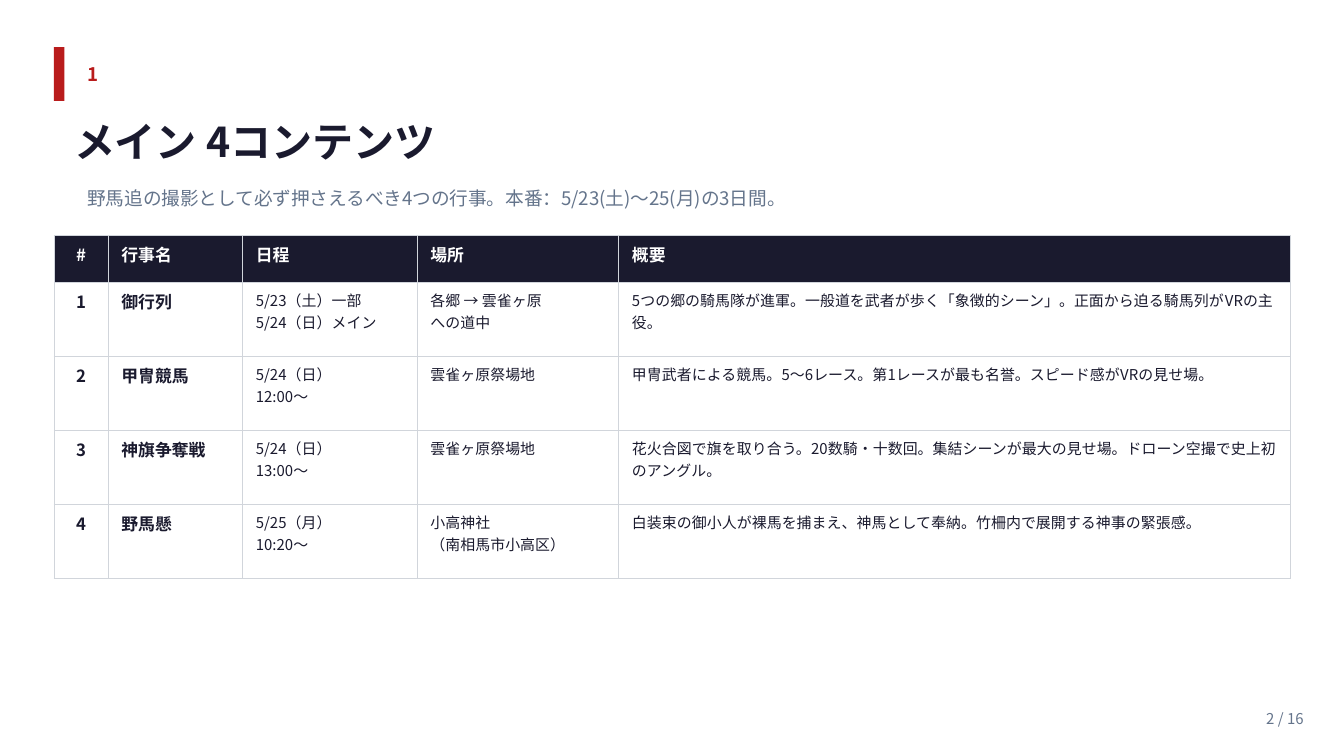
from lxml import etree
from pptx import Presentation
from pptx.dml.color import RGBColor
from pptx.enum.shapes import MSO_SHAPE
from pptx.enum.text import MSO_ANCHOR, PP_ALIGN
from pptx.oxml.ns import qn
from pptx.util import Cm, Pt

RECT = MSO_SHAPE.RECTANGLE
MIDDLE = MSO_ANCHOR.MIDDLE
LEFT, CENTER, RIGHT = PP_ALIGN.LEFT, PP_ALIGN.CENTER, PP_ALIGN.RIGHT

FONT = "Noto Sans CJK JP"
RED, NAVY, SLATE, GRID, WHITE = "B91C1C", "1A1A2E", "64748B", "D1D5DB", "FFFFFF"

COLUMN_WIDTHS = [1.02, 2.54, 3.3, 3.81, 12.7]
HEADER_HEIGHT, ROW_HEIGHT = 0.89, 1.4
EVENTS = [
    ["#", "行事名", "日程", "場所", "概要"],
    ["1", "御行列", "5/23（土）一部\n5/24（日）メイン", "各郷 → 雲雀ヶ原\nへの道中",
     "5つの郷の騎馬隊が進軍。一般道を武者が歩く「象徴的シーン」。正面から迫る騎馬列がVRの主役。"],
    ["2", "甲冑競馬", "5/24（日）\n12:00〜", "雲雀ヶ原祭場地",
     "甲冑武者による競馬。5〜6レース。第1レースが最も名誉。スピード感がVRの見せ場。"],
    ["3", "神旗争奪戦", "5/24（日）\n13:00〜", "雲雀ヶ原祭場地",
     "花火合図で旗を取り合う。20数騎・十数回。集結シーンが最大の見せ場。ドローン空撮で史上初のアングル。"],
    ["4", "野馬懸", "5/25（月）\n10:20〜", "小高神社\n（南相馬市小高区）",
     "白装束の御小人が裸馬を捕まえ、神馬として奉納。竹柵内で展開する神事の緊張感。"],
]


def rgb(color):
    return RGBColor.from_string(color)


def write(tf, text, size, color, bold=False, align=LEFT):
    tf.text = text
    for p in tf.paragraphs:
        p.alignment = align
        for r in p.runs:
            r.font.name = FONT
            r.font.size = Pt(size)
            r.font.bold = bold
            r.font.color.rgb = rgb(color)
            # East Asian text takes its typeface from its own element
            etree.SubElement(r.font._element, qn("a:ea"), typeface=FONT)


def add_label(s, x, y, w, h, text, size, color, bold=False, align=LEFT):
    tf = s.shapes.add_textbox(Cm(x), Cm(y), Cm(w), Cm(h)).text_frame
    tf.word_wrap = True
    tf.vertical_anchor = MIDDLE
    write(tf, text, size, color, bold, align)
    return tf


def add_bar(s, x, y, w, h, color):
    sp = s.shapes.add_shape(RECT, Cm(x), Cm(y), Cm(w), Cm(h))
    sp.shadow.inherit = False
    sp.fill.solid()
    sp.fill.fore_color.rgb = rgb(color)
    sp.line.fill.background()


def set_borders(cell, color, width):
    tc_pr = cell._tc.get_or_add_tcPr()
    for side in ("a:lnL", "a:lnR", "a:lnT", "a:lnB"):
        ln = etree.SubElement(tc_pr, qn(side), w=str(Pt(width)))
        fill = etree.SubElement(ln, qn("a:solidFill"))
        etree.SubElement(fill, qn("a:srgbClr"), val=color)


def add_event_table(s, x, y):
    height = HEADER_HEIGHT + ROW_HEIGHT * (len(EVENTS) - 1)
    table = s.shapes.add_table(len(EVENTS), len(COLUMN_WIDTHS), Cm(x), Cm(y),
                               Cm(sum(COLUMN_WIDTHS)), Cm(height)).table
    for column, width in zip(table.columns, COLUMN_WIDTHS):
        column.width = Cm(width)
    for i, event in enumerate(EVENTS):
        header = i == 0
        table.rows[i].height = Cm(HEADER_HEIGHT if header else ROW_HEIGHT)
        for j, text in enumerate(event):
            cell = table.cell(i, j)
            set_borders(cell, GRID, 0.5)
            if header:
                cell.fill.solid()
                cell.fill.fore_color.rgb = rgb(NAVY)
            else:
                cell.fill.background()
            strong = header or j < 2
            write(cell.text_frame, text, 9 if strong else 8,
                  WHITE if header else NAVY, strong, CENTER if j == 0 else LEFT)


def main():
    prs = Presentation()
    prs.slide_width, prs.slide_height = Cm(25.4), Cm(14.29)
    s = prs.slides.add_slide(prs.slide_layouts[6])

    # Section marker
    add_bar(s, 1.02, 0.89, 0.2, 1.02, RED)
    add_label(s, 1.4, 0.89, 5.08, 1.02, "1", 10, RED, bold=True)

    # Title and lead
    title = add_label(s, 1.4, 2.03, 22.86, 1.27, "メイン 4コンテンツ", 22, NAVY, bold=True)
    title.margin_left = title.margin_right = title.margin_top = title.margin_bottom = 0
    add_label(s, 1.4, 3.3, 22.86, 0.89,
              "野馬追の撮影として必ず押さえるべき4つの行事。本番：5/23(土)〜25(月)の3日間。", 10, SLATE)

    # Events
    add_event_table(s, 1.02, 4.45)

    # Page number
    add_label(s, 22.86, 13.21, 2.03, 0.76, "2 / 16", 8, SLATE, align=RIGHT)

    prs.save("out.pptx")


if __name__ == "__main__":
    main()
